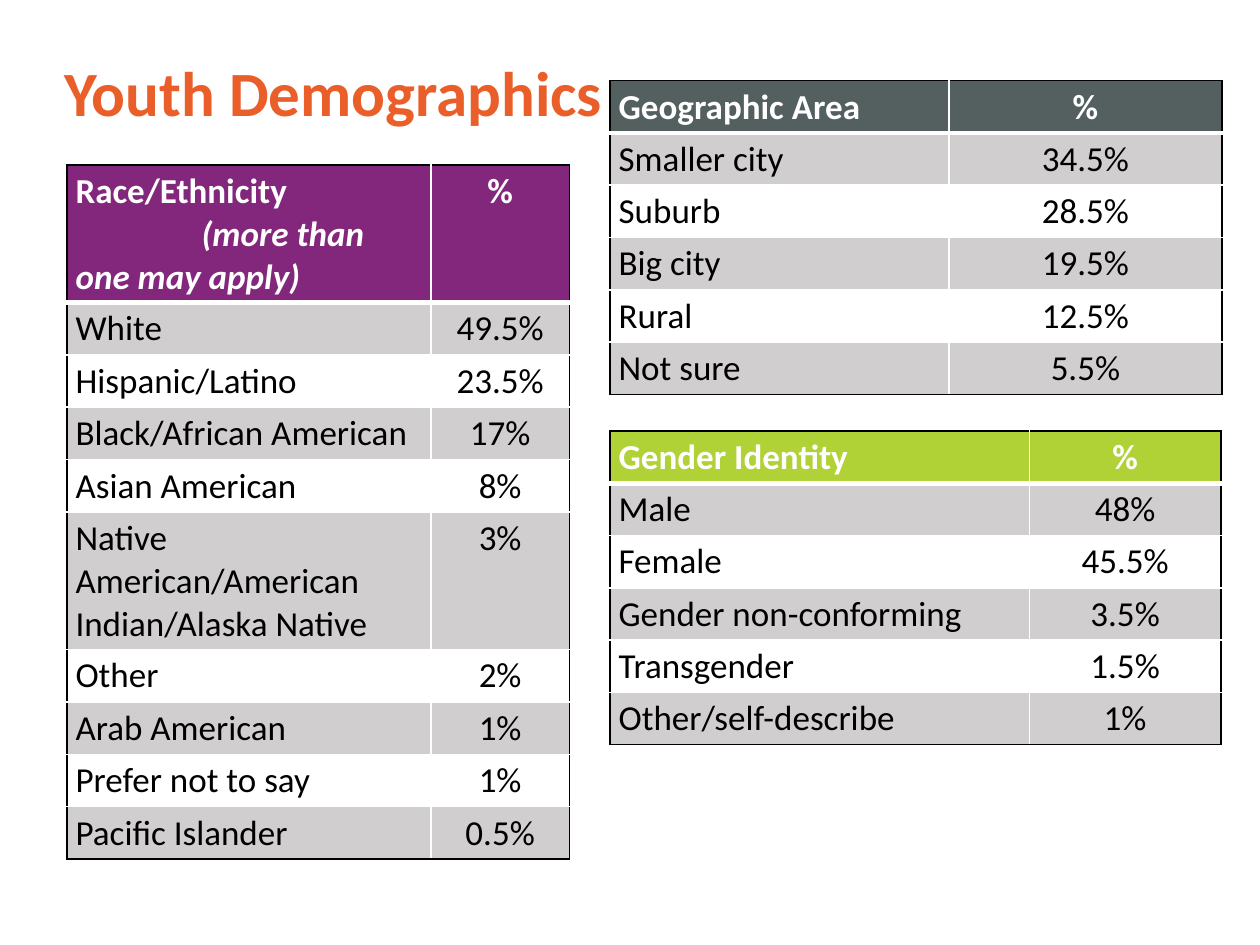
import pptx
import pptx.util
import pptx.dml.color
import pptx.enum.text
import pptx.oxml
import pptx.oxml.ns

Inches = pptx.util.Inches
COLORS = {
    "title": "EA5E29",
    "race": "82277C",
    "area": "53605F",
    "gender": "B0D236",
    "band": "D0CECE",
    "white": "FFFFFF",
    "black": "000000",
}


class SlideBuilder:
    font_name = "Calibri"
    title_size = 36
    table_size = 20

    def __init__(self, deck):
        self.page = deck.slides.add_slide(deck.slide_layouts[6])

    def color(self, name):
        return pptx.dml.color.RGBColor.from_string(COLORS[name])

    def span(self, para, text, size, color, bold=False, italic=False):
        span = para.add_run()
        span.text = text
        span.font.name = self.font_name
        span.font.size = pptx.util.Pt(size)
        span.font.bold = bold
        span.font.italic = italic
        span.font.color.rgb = self.color(color)

    def title(self, text, left, top, width, height):
        box = self.page.shapes.add_textbox(Inches(left), Inches(top), Inches(width), Inches(height))
        box.text_frame.word_wrap = True
        box.text_frame.vertical_anchor = pptx.enum.text.MSO_ANCHOR.MIDDLE
        para = box.text_frame.paragraphs[0]
        para.line_spacing = 0.9
        self.span(para, text, self.title_size, "title", bold=True)

    def border(self, cell, side, color, points):
        properties = cell._tc.get_or_add_tcPr()
        properties.append(pptx.oxml.parse_xml(
            f'<a:ln{side} {pptx.oxml.ns.nsdecls("a")} w="{pptx.util.Pt(points)}">'
            f'<a:solidFill><a:srgbClr val="{COLORS[color]}"/></a:solidFill></a:ln{side}>'
        ))

    def cell(self, table, row, column, text, header_color):
        cell = table.cell(row, column)
        is_header = row == 0
        is_last = row == len(table.rows) - 1
        self.border(cell, "L", "white" if column else "black", 1)
        self.border(cell, "R", "black" if column else "white", 1)
        self.border(cell, "T", "black" if is_header else "white", 1)
        self.border(cell, "B", "black" if is_last else "white", 3 if is_header else 1)
        cell.fill.solid()
        band = "band" if row % 2 else "white"
        cell.fill.fore_color.rgb = self.color(header_color if is_header else band)
        cell.margin_left = cell.margin_right = Inches(0.07)
        cell.margin_top = Inches(0.04)
        cell.margin_bottom = Inches(0.03)
        para = cell.text_frame.paragraphs[0]
        if column:
            para.alignment = pptx.enum.text.PP_ALIGN.CENTER
        self.span(para, text, self.table_size, "white" if is_header else "black", bold=is_header)

    def table(self, left, top, height, widths, header_color, rows, tall_rows=()):
        tall = 1.09
        regular = (height - tall * len(tall_rows)) / (len(rows) - len(tall_rows))
        frame = self.page.shapes.add_table(
            len(rows), len(widths), Inches(left), Inches(top), Inches(sum(widths)), Inches(height)
        )
        table = frame.table
        for column, width in enumerate(widths):
            table.columns[column].width = Inches(width)
        for row, texts in enumerate(rows):
            table.rows[row].height = Inches(tall if row in tall_rows else regular)
            for column, text in enumerate(texts):
                self.cell(table, row, column, text, header_color)
        return table

    def indented_note(self, cell, text, indent):
        para = cell.text_frame.add_paragraph()
        para._p.get_or_add_pPr().set("indent", str(Inches(indent)))
        self.span(para, text, self.table_size, "white", bold=True, italic=True)


def main():
    deck = pptx.Presentation()
    deck.slide_width = Inches(10)
    deck.slide_height = Inches(7.5)
    builder = SlideBuilder(deck)
    builder.title("Youth Demographics", 0.41, 0.22, 8.85, 1.09)

    race_rows = [
        ("Race/Ethnicity", "%"),
        ("White", "49.5%"),
        ("Hispanic/Latino", "23.5%"),
        ("Black/African American", "17%"),
        ("Asian American", "8%"),
        ("Native American/American Indian/Alaska Native", "3%"),
        ("Other", "2%"),
        ("Arab American", "1%"),
        ("Prefer not to say", "1%"),
        ("Pacific Islander", "0.5%"),
    ]
    race_table = builder.table(0.53, 1.31, 5.51, (2.89, 1.1), "race", race_rows, tall_rows=(0, 5))
    builder.indented_note(race_table.cell(0, 0), "(more than one may apply)", 1)

    area_rows = [
        ("Geographic Area", "%"),
        ("Smaller city", "34.5%"),
        ("Suburb", "28.5%"),
        ("Big city", "19.5%"),
        ("Rural", "12.5%"),
        ("Not sure", "5.5%"),
    ]
    builder.table(4.84, 0.64, 2.49, (2.69, 2.17), "area", area_rows)

    gender_rows = [
        ("Gender Identity", "%"),
        ("Male", "48%"),
        ("Female", "45.5%"),
        ("Gender non-conforming", "3.5%"),
        ("Transgender", "1.5%"),
        ("Other/self-describe", "1%"),
    ]
    builder.table(4.84, 3.42, 2.49, (3.33, 1.52), "gender", gender_rows)
    deck.save("out.pptx")


if __name__ == "__main__":
    main()
